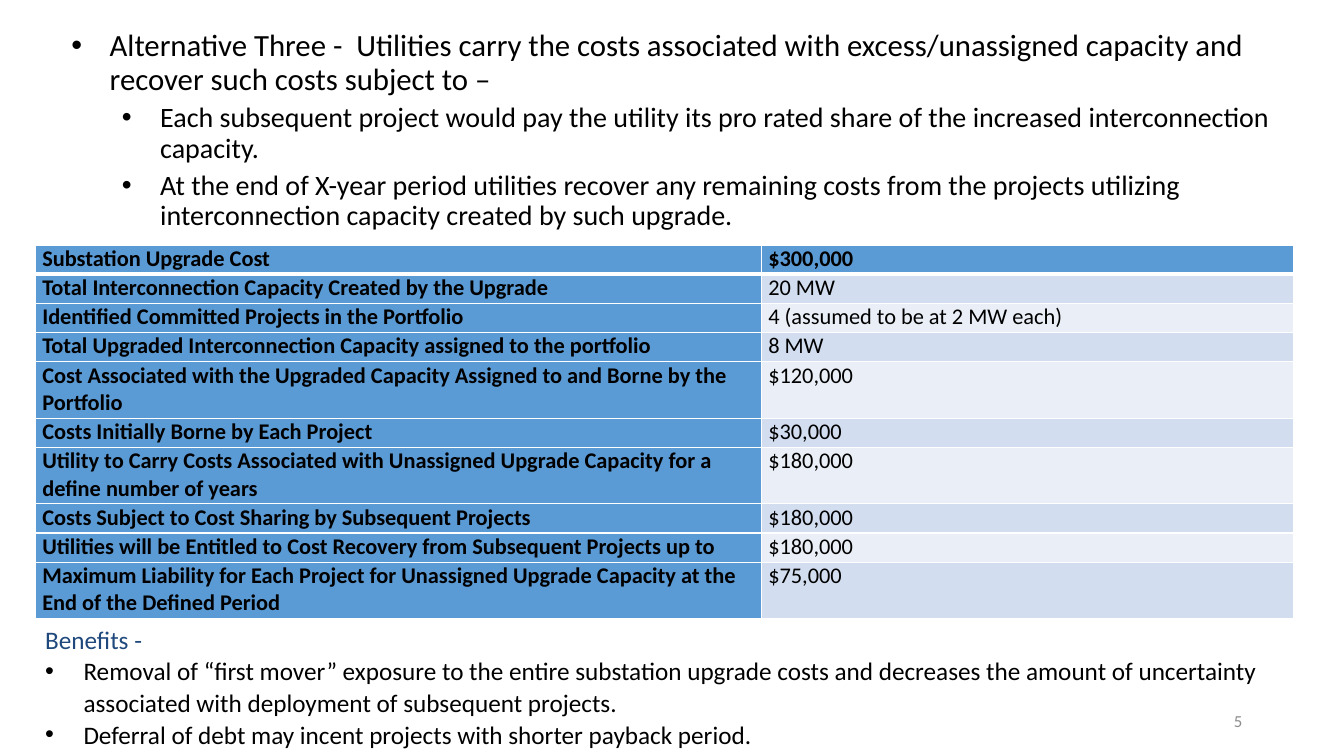
from dataclasses import dataclass, field
from typing import Any

from lxml.etree import SubElement
from pptx import Presentation
from pptx.dml.color import RGBColor as Rgb
from pptx.enum.text import MSO_ANCHOR as Anchor, MSO_AUTO_SIZE as AutoSize, PP_ALIGN as Align
from pptx.oxml.ns import qn
from pptx.util import Inches, Pt

COLORS = {
    "text": "000000",
    "heading": "1F497D",
    "number": "8C8C8C",
    "label": "5B9BD5",
    "band_dark": "D2DEEF",
    "band_light": "EAEFF7",
    "rule": "FFFFFF",
}
FONT = "Calibri"
SHORT_ROW, TALL_ROW = 0.29, 0.56


@dataclass(frozen=True)
class Para:
    text: str
    size: float
    color: str = "text"
    indent: float = 0
    bold: bool = False
    format: dict[str, Any] = field(default_factory=dict)


@dataclass(frozen=True)
class TextBlock:
    left: float
    top: float
    width: float
    height: float
    paras: list[Para]
    format: dict[str, Any] = field(default_factory=dict)


@dataclass(frozen=True)
class CostRow:
    label: str
    value: str
    height: float = SHORT_ROW


ALTERNATIVE = {"line_spacing": 0.9, "space_before": Pt(5)}
SUBJECT_TO = {**ALTERNATIVE, "level": 1}
BENEFIT = {"line_spacing": 1.05}

TEXT_BLOCKS = [
    TextBlock(0.11, 0.25, 13.11, 6.49, [
        Para("Alternative Three -  Utilities carry the costs associated with excess/unassigned "
             "capacity and recover such costs subject to –", 22, indent=0.88, format=ALTERNATIVE),
        Para("Each subsequent project would pay the utility its pro rated share of the increased "
             "interconnection capacity.", 20, indent=1.38, format=SUBJECT_TO),
        Para("At the end of X-year period utilities recover any remaining costs from the projects "
             "utilizing interconnection capacity created by such upgrade.", 20, indent=1.38,
             format=SUBJECT_TO),
    ]),
    TextBlock(0.35, 6.14, 12.58, 1.36, [
        Para("Benefits -", 18, "heading"),
        Para("Removal of “first mover” exposure to the entire substation upgrade costs and "
             "decreases the amount of uncertainty associated with deployment of subsequent "
             "projects.", 18, indent=0.38, format=BENEFIT),
        Para("Deferral of debt may incent projects with shorter payback period.", 18, indent=0.38,
             format={**BENEFIT, "space_after": Pt(8)}),
    ], {"auto_size": AutoSize.SHAPE_TO_FIT_TEXT}),
    TextBlock(9.42, 6.95, 3, 0.4, [
        Para("5", 12, "number", format={"alignment": Align.RIGHT}),
    ], {"vertical_anchor": Anchor.MIDDLE}),
]

COST_ROWS = [
    CostRow("Substation Upgrade Cost", "$300,000"),
    CostRow("Total Interconnection Capacity Created by the Upgrade", "20 MW"),
    CostRow("Identified Committed Projects in the Portfolio", "4 (assumed to be at 2 MW each)"),
    CostRow("Total Upgraded Interconnection Capacity assigned to the portfolio", "8 MW"),
    CostRow("Cost Associated with the Upgraded Capacity Assigned to and Borne by the Portfolio",
            "$120,000", TALL_ROW),
    CostRow("Costs Initially Borne by Each Project", "$30,000"),
    CostRow("Utility to Carry Costs Associated with Unassigned Upgrade Capacity for a define "
            "number of years", "$180,000", TALL_ROW),
    CostRow("Costs Subject to Cost Sharing by Subsequent Projects", "$180,000"),
    CostRow("Utilities will be Entitled to Cost Recovery from Subsequent Projects up to",
            "$180,000"),
    CostRow("Maximum Liability for Each Project for Unassigned Upgrade Capacity at the End of "
            "the Defined Period", "$75,000", TALL_ROW),
]
COLUMN_WIDTHS = [7.2, 5.28]
CELL_FORMAT = {
    "margin_left": Inches(0.07),
    "margin_right": Inches(0.07),
    "margin_top": 0,
    "margin_bottom": 0,
    "vertical_anchor": Anchor.TOP,
}


def apply_format(target: Any, values: dict[str, Any]) -> None:
    for name, value in values.items():
        setattr(target, name, value)


def write_para(paragraph: Any, para: Para) -> None:
    apply_format(paragraph, para.format)
    run = paragraph.add_run()
    run.text = para.text
    apply_format(run.font, {"name": FONT, "size": Pt(para.size), "bold": para.bold})
    run.font.color.rgb = Rgb.from_string(COLORS[para.color])
    if para.indent:
        properties = paragraph._p.get_or_add_pPr()
        properties.set("marL", str(Inches(para.indent)))
        properties.set("indent", str(Inches(-0.38)))
        SubElement(properties, qn("a:buFont"), typeface="Arial")
        SubElement(properties, qn("a:buChar"), char="•")


def draw_text(slide: Any, block: TextBlock) -> None:
    box = slide.shapes.add_textbox(Inches(block.left), Inches(block.top),
                                   Inches(block.width), Inches(block.height))
    frame = box.text_frame
    apply_format(frame, {"word_wrap": True, **block.format})
    for index, para in enumerate(block.paras):
        write_para(frame.add_paragraph() if index else frame.paragraphs[0], para)


def draw_borders(cell: Any, widths: dict[str, float]) -> None:
    properties = cell._tc.get_or_add_tcPr()
    for side, width in widths.items():
        line = SubElement(properties, qn(f"a:ln{side}"), w=str(Pt(width)))
        fill = SubElement(line, qn("a:solidFill"))
        SubElement(fill, qn("a:srgbClr"), val=COLORS["rule"])


def draw_costs(slide: Any, rows: list[CostRow]) -> None:
    frame = slide.shapes.add_table(
        len(rows), len(COLUMN_WIDTHS), Inches(0.35), Inches(2.43),
        Inches(sum(COLUMN_WIDTHS)), Inches(sum(row.height for row in rows)))
    table = frame.table
    for column, width in zip(table.columns, COLUMN_WIDTHS):
        column.width = Inches(width)
    for r, row in enumerate(rows):
        table.rows[r].height = Inches(row.height)
        band = "band_dark" if r % 2 else "band_light"
        for c, text in enumerate((row.label, row.value)):
            emphasized = r == 0 or c == 0
            cell = table.cell(r, c)
            apply_format(cell, CELL_FORMAT)
            draw_borders(cell, {"L": 1, "R": 1, "T": 3 if r == 1 else 1, "B": 3 if r == 0 else 1})
            cell.fill.solid()
            cell.fill.fore_color.rgb = Rgb.from_string(COLORS["label" if emphasized else band])
            write_para(cell.text_frame.paragraphs[0], Para(text, 16, bold=emphasized))


def main() -> None:
    deck = Presentation()
    apply_format(deck, {"slide_width": Inches(13.33), "slide_height": Inches(7.5)})
    slide = deck.slides.add_slide(deck.slide_layouts[6])
    alternative, benefits, page_number = TEXT_BLOCKS
    draw_text(slide, alternative)
    draw_costs(slide, COST_ROWS)
    draw_text(slide, benefits)
    draw_text(slide, page_number)
    deck.save("out.pptx")


if __name__ == "__main__":
    main()
